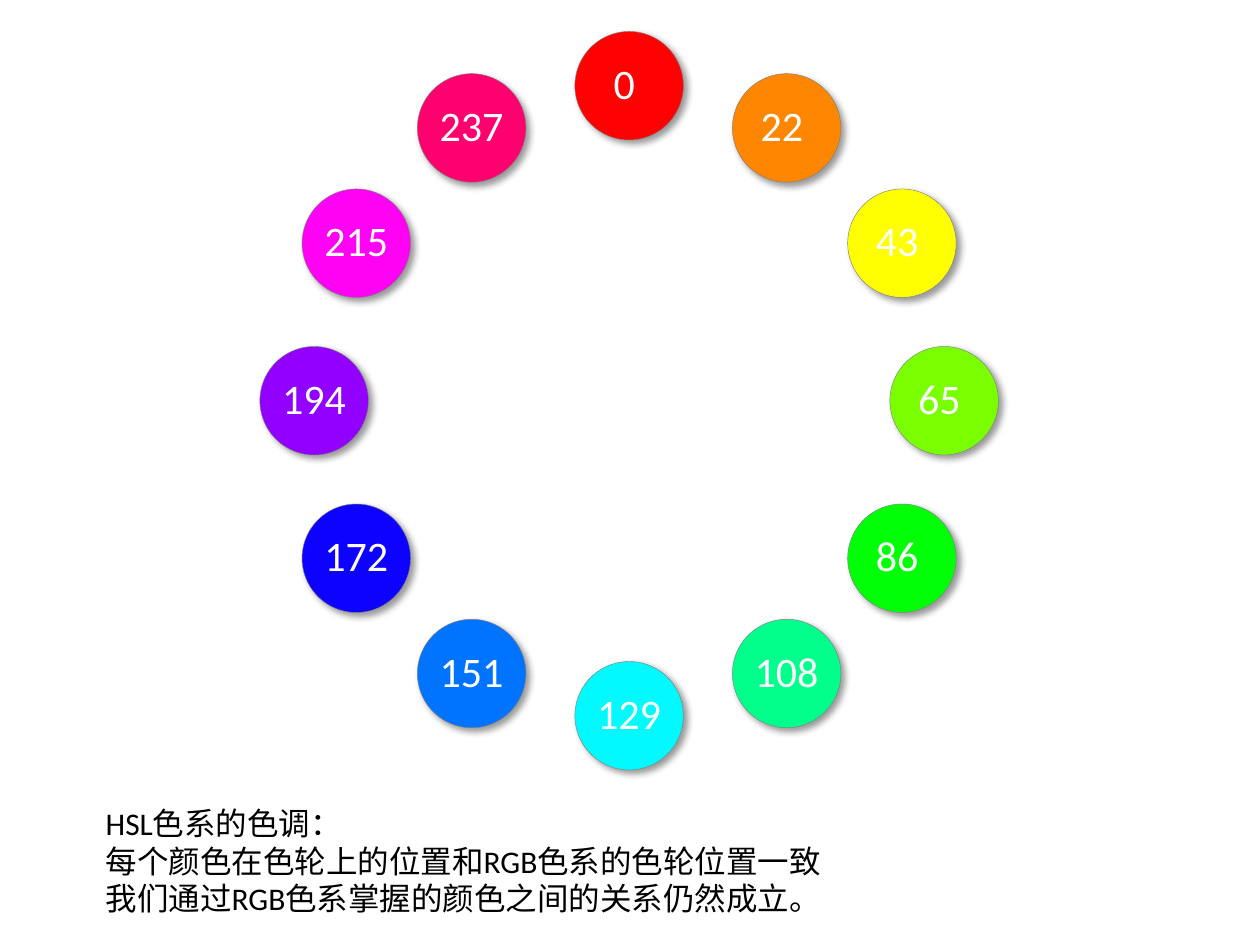
import math

import lxml.etree
import pptx
import pptx.dml.color
import pptx.enum.shapes
import pptx.enum.text
import pptx.oxml
import pptx.oxml.ns
import pptx.util

Pt = pptx.util.Pt
RGB = pptx.dml.color.RGBColor.from_string

THEME = {
    "font": "Calibri",
    "hue_size": 24,
    "note_size": 18,
    "hue_text": "FFFFFF",
    "note_text": "000000",
    "outline": "808080",
    "shadow": "000000",
}

# Hue value and colour, clockwise from the top
HUES = [
    ("0", "FF0101"), ("22", "FF8601"), ("43", "FFFF01"), ("65", "7AFF01"),
    ("86", "01FF07"), ("108", "01FF8C"), ("129", "01F9FF"), ("151", "0174FF"),
    ("172", "0D01FF"), ("194", "9201FF"), ("215", "FF01F3"), ("237", "FF016E"),
]
NOTES = [
    "HSL色系的色调：",
    "每个颜色在色轮上的位置和RGB色系的色轮位置一致",
    "我们通过RGB色系掌握的颜色之间的关系仍然成立。",
]
CENTER_X, CENTER_Y, RADIUS, DIAMETER = 359.5, 229, 180, 62


def style_run(r, size, color):
    r.font.name = THEME["font"]
    r.font.size = Pt(size)
    r.font.color.rgb = RGB(color)


def add_shadow(sp):
    ns = pptx.oxml.ns.nsdecls("a")
    sp._element.spPr.append(pptx.oxml.parse_xml(
        f'<a:effectLst {ns}><a:outerShdw blurRad="{Pt(4)}" dist="{Pt(3)}" '
        f'dir="{45 * 60000}" algn="tl" rotWithShape="0">'
        f'<a:srgbClr val="{THEME["shadow"]}"><a:alpha val="40000"/></a:srgbClr>'
        '</a:outerShdw></a:effectLst>'))


prs = pptx.Presentation()
prs.slide_width, prs.slide_height = Pt(720), Pt(540)
s = prs.slides.add_slide(prs.slide_layouts[6])

# Colour wheel
for i, (hue, color) in enumerate(HUES):
    angle = 2 * math.pi * i / len(HUES)
    left = CENTER_X + RADIUS * math.sin(angle) - DIAMETER / 2
    top = CENTER_Y - RADIUS * math.cos(angle) - DIAMETER / 2
    sp = s.shapes.add_shape(pptx.enum.shapes.MSO_SHAPE.OVAL,
                            Pt(left), Pt(top), Pt(DIAMETER), Pt(DIAMETER))
    sp.fill.solid()
    sp.fill.fore_color.rgb = RGB(color)
    sp.line.color.rgb = RGB(THEME["outline"])
    sp.line.width = Pt(0.25)
    add_shadow(sp)
    tf = sp.text_frame
    tf.word_wrap = True
    tf.vertical_anchor = pptx.enum.text.MSO_ANCHOR.MIDDLE
    tf.margin_left = tf.margin_right = tf.margin_top = tf.margin_bottom = Pt(3)
    tf.text = hue + " "
    p = tf.paragraphs[0]
    p.alignment = pptx.enum.text.PP_ALIGN.CENTER
    p.line_spacing = 0.9
    style_run(p.runs[0], THEME["hue_size"], THEME["hue_text"])

# Explanation below the wheel
tf = s.shapes.add_textbox(Pt(53.3), Pt(455.8), Pt(613.4), Pt(72.7)).text_frame
tf.word_wrap = True
tf.auto_size = pptx.enum.text.MSO_AUTO_SIZE.SHAPE_TO_FIT_TEXT
tf.text = "\n".join(NOTES)
for p in tf.paragraphs:
    style_run(p.runs[0], THEME["note_size"], THEME["note_text"])

prs.save("out.pptx")
